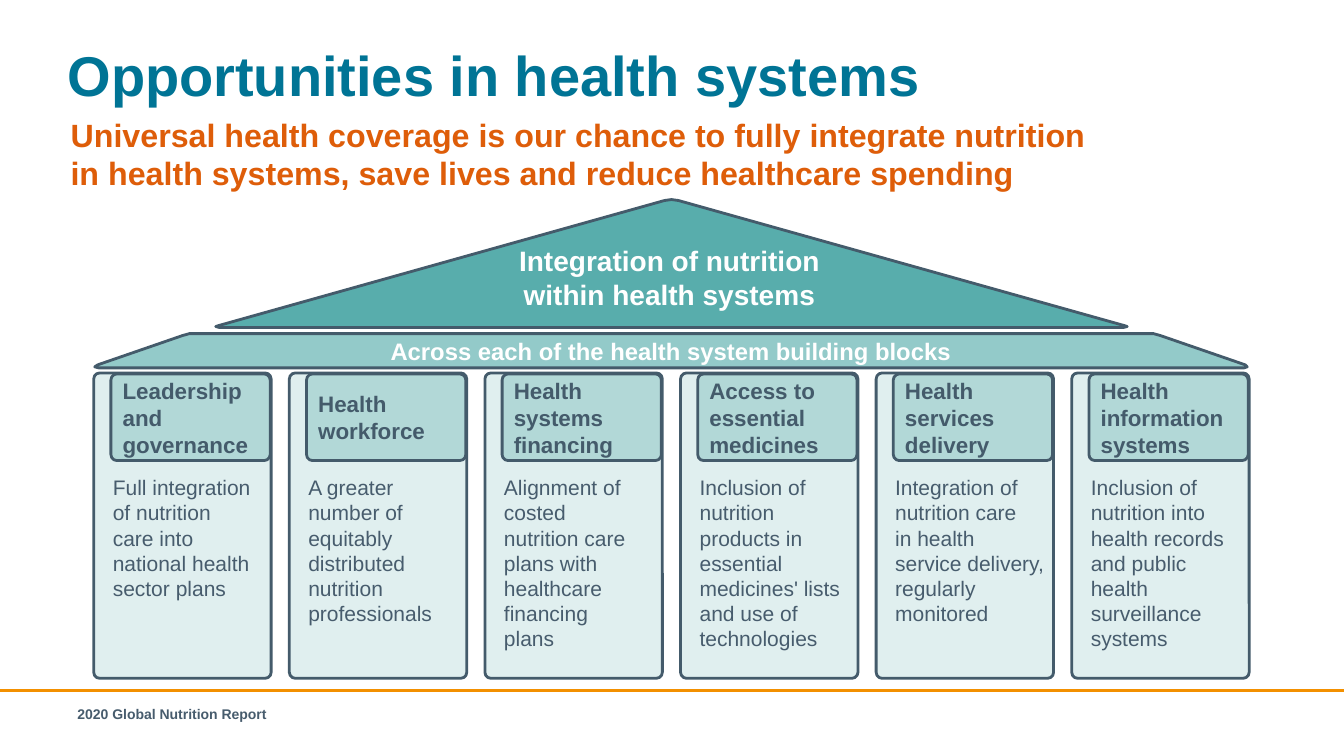
from pptx import Presentation
from pptx.dml.color import RGBColor
from pptx.enum.shapes import MSO_CONNECTOR, MSO_SHAPE
from pptx.enum.text import MSO_ANCHOR, MSO_AUTO_SIZE, PP_ALIGN
from pptx.oxml.ns import qn
from pptx.util import Inches, Pt
from lxml import etree

BLUE = RGBColor(0x00, 0x74, 0x95)
ORANGE = RGBColor(0xDE, 0x5D, 0x09)
AMBER = RGBColor(0xF3, 0x90, 0x00)
SLATE = RGBColor(0x44, 0x5B, 0x6B)
TEXT = RGBColor(0x47, 0x5C, 0x6D)
WHITE = RGBColor(0xFF, 0xFF, 0xFF)
ROOF = RGBColor(0x58, 0xAD, 0xAC)
BEAM = RGBColor(0x93, 0xCA, 0xC9)
HEAD = RGBColor(0xB2, 0xD8, 0xD7)
PILLAR = RGBColor(0xE0, 0xEF, 0xEF)

# Slide and pillar grid, in inches
WIDTH, HEIGHT = 13.33, 7.5
LEFT, TOP, PITCH = 0.93, 3.7, 1.94
PILLAR_W, PILLAR_H = 1.76, 3.03
HEAD_W, HEAD_H = 1.58, 0.86
RADIUS = 0.06


def write(s, text, size, color, bold=True, align=PP_ALIGN.LEFT,
          anchor=MSO_ANCHOR.TOP, inset=None):
    tf = s.text_frame
    tf.word_wrap = True
    tf.auto_size = MSO_AUTO_SIZE.NONE
    tf.vertical_anchor = anchor
    if inset is not None:
        tf.margin_left = tf.margin_right = tf.margin_top = tf.margin_bottom = inset
    p = tf.paragraphs[0]
    p.text = text
    p.alignment = align
    p.line_spacing = 1.0
    p.space_before = Pt(0)
    for r in p.runs:
        r.font.name = "Arial"
        r.font.size = Pt(size)
        r.font.bold = bold
        r.font.color.rgb = color


def paint(s, fill):
    s.shadow.inherit = False
    s.fill.solid()
    s.fill.fore_color.rgb = fill
    s.line.color.rgb = SLATE
    s.line.width = Pt(2)


prs = Presentation()
prs.slide_width, prs.slide_height = Inches(WIDTH), Inches(HEIGHT)
slide = prs.slides.add_slide(prs.slide_layouts[1])
shapes = slide.shapes

# Rule above the footer
rule = shapes.add_connector(MSO_CONNECTOR.STRAIGHT, 0, Inches(6.85),
                            prs.slide_width, Inches(6.85))
rule.line.color.rgb = AMBER
rule.line.width = Pt(2)
etree.SubElement(rule._element.spPr, qn("a:effectLst"))

# Title and subtitle
title, body = shapes.title, slide.placeholders[1]
title.left, title.top, title.width, title.height = map(Inches, (0.67, 0.4, 12, 0.65))
write(title, "Opportunities in health systems", 40, BLUE, inset=0)
body.left, body.top, body.width, body.height = map(Inches, (0.7, 1.14, 12, 0.8))
pPr = body.text_frame.paragraphs[0]._p.get_or_add_pPr()
pPr.set("marL", "0")
pPr.set("indent", "0")
etree.SubElement(pPr, qn("a:buNone"))
write(body, "Universal health coverage is our chance to fully integrate nutrition\v"
      "in health systems, save lives and reduce healthcare spending", 23, ORANGE, inset=0)

# Pillars: heading, text, width of the text box
pillars = [
    ("Leadership\vand governance",
     "Full integration of nutrition care into national health sector plans", 1.58),
    ("Health\vworkforce",
     "A greater number of equitably distributed nutrition professionals", 1.76),
    ("Health\vsystems\vfinancing",
     "Alignment of costed nutrition care plans with healthcare financing plans", 1.58),
    ("Access to\vessential\vmedicines",
     "Inclusion of nutrition products in essential medicines' lists "
     "and use of technologies", 1.68),
    ("Health services\vdelivery",
     "Integration of nutrition care\vin health\vservice delivery, "
     "regularly monitored", 1.76),
    ("Health\vinformation\vsystems",
     "Inclusion of nutrition into health records and public health "
     "surveillance systems", 1.68),
]
for i, (heading, text, text_w) in enumerate(pillars):
    x = LEFT + i * PITCH
    pillar = shapes.add_shape(MSO_SHAPE.ROUNDED_RECTANGLE, Inches(x), Inches(TOP),
                              Inches(PILLAR_W), Inches(PILLAR_H))
    pillar.adjustments[0] = RADIUS / PILLAR_W
    paint(pillar, PILLAR)
    head = shapes.add_shape(MSO_SHAPE.ROUNDED_RECTANGLE,
                            Inches(x + PILLAR_W - HEAD_W - 0.01), Inches(TOP + 0.01),
                            Inches(HEAD_W), Inches(HEAD_H))
    head.adjustments[0] = RADIUS / HEAD_H
    paint(head, HEAD)
    write(head, heading, 16, SLATE, anchor=MSO_ANCHOR.MIDDLE)
    box = shapes.add_textbox(Inches(x + 0.09), Inches(TOP + 0.96),
                             Inches(text_w), Inches(1.87))
    write(box, text, 15, TEXT, bold=False)

# Roof and beam, with softened corners, in hundredths of an inch
outlines = [
    (ROOF, [(673, 199), (666, 198), (659, 199), (217, 323), (214, 324),
            (218, 325), (1114, 325), (1118, 324), (1115, 323)]),
    (BEAM, [(97, 362), (94, 364), (98, 365), (1234, 365), (1237, 364),
            (1235, 362), (1151, 333), (1144, 331), (1135, 331),
            (197, 331), (188, 331), (181, 333)]),
]
for fill, points in outlines:
    builder = shapes.build_freeform(*points[0], scale=Inches(0.01))
    builder.add_line_segments(points[1:], close=True)
    s = builder.convert_to_shape()
    paint(s, fill)
# The beam is the last outline drawn
write(s, "Across each of the health system building blocks", 17, WHITE,
      align=PP_ALIGN.CENTER, anchor=MSO_ANCHOR.MIDDLE)
label = shapes.add_textbox(Inches(4.88), Inches(2.37), Inches(3.52), Inches(0.77))
write(label, "Integration of nutrition within health systems", 20, WHITE,
      align=PP_ALIGN.CENTER)

# Footer
footer = shapes.add_textbox(Inches(0.67), Inches(6.95), Inches(9.6), Inches(0.4))
write(footer, "2020 Global Nutrition Report", 10, TEXT)

prs.save("out.pptx")
